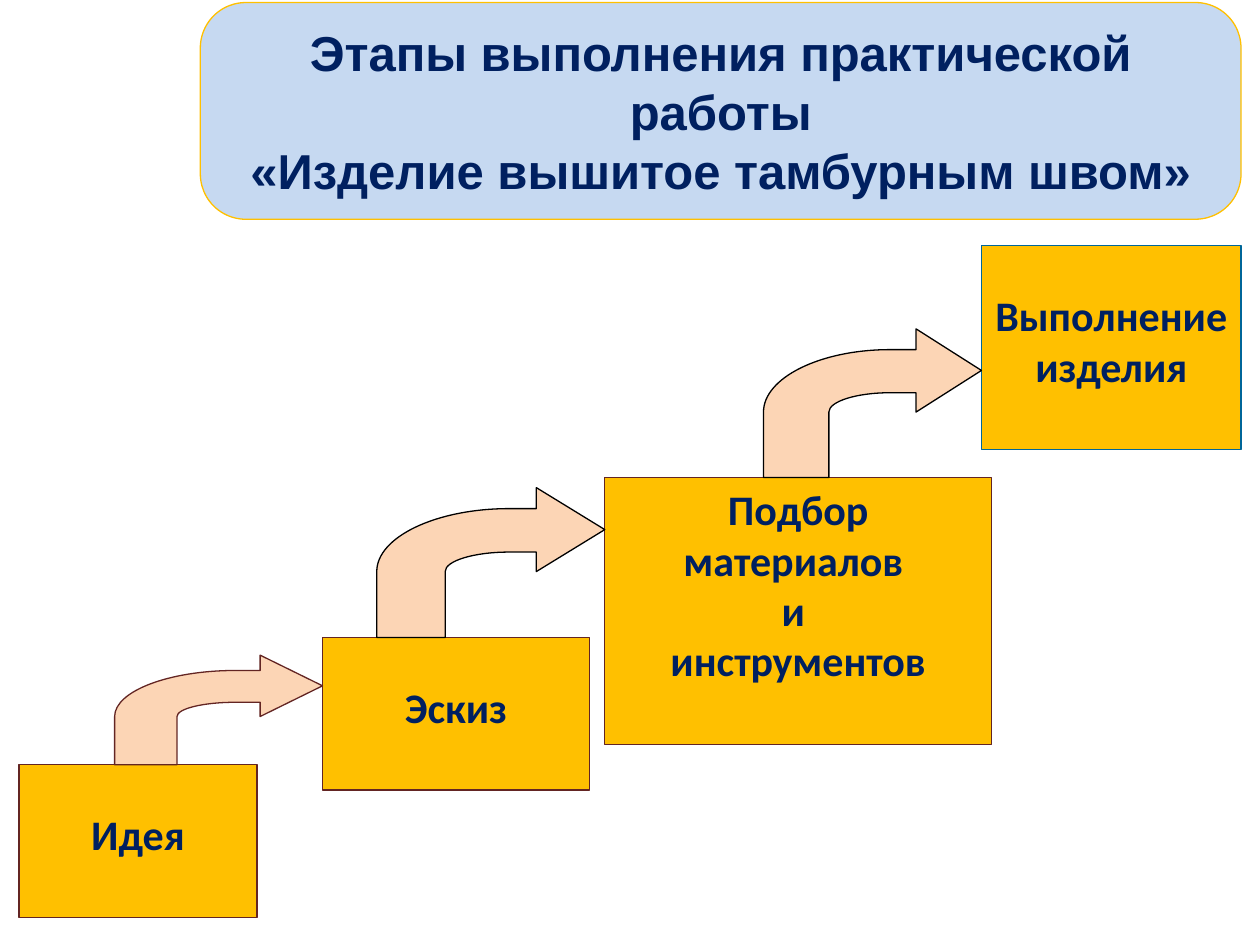
"""Build a slide of four rising steps joined by bent arrows."""
import pptx
import pptx.dml.color
import pptx.enum.shapes
import pptx.enum.text
import pptx.oxml.ns
import pptx.util

PX = 9144
RGBColor = pptx.dml.color.RGBColor
NAVY = RGBColor(0x00, 0x20, 0x60)
PALE_BLUE = RGBColor(0xC6, 0xD9, 0xF1)
GOLD = RGBColor(0xFF, 0xC0, 0x00)
PEACH = RGBColor(0xFC, 0xD5, 0xB5)
BROWN = RGBColor(0x63, 0x25, 0x23)
TEAL = RGBColor(0x00, 0x66, 0x99)
BLACK = RGBColor(0x00, 0x00, 0x00)
SHAPES = pptx.enum.shapes.MSO_SHAPE
ANCHOR = pptx.enum.text.MSO_ANCHOR


def paint(shape, fill, line):
    shape.shadow.inherit = False
    shape.fill.solid()
    shape.fill.fore_color.rgb = fill
    shape.line.color.rgb = line
    shape.line.width = pptx.util.Pt(0.75)


def write(box, lines, font, size, anchor, top):
    frame = box.text_frame
    frame.word_wrap = True
    frame.vertical_anchor = anchor
    frame.margin_top = top * PX
    for index, line in enumerate(lines):
        para = frame.add_paragraph() if index else frame.paragraphs[0]
        para.alignment = pptx.enum.text.PP_ALIGN.CENTER
        span = para.add_run()
        span.text = line
        span.font.name = font
        span.font.size = pptx.util.Pt(size)
        span.font.bold = True
        span.font.color.rgb = NAVY


deck = pptx.Presentation()
deck.slide_width = 1000 * PX
deck.slide_height = 750 * PX
page = deck.slides.add_slide(deck.slide_layouts[6])

title = page.shapes.add_shape(SHAPES.ROUNDED_RECTANGLE, 159 * PX, 2 * PX, 826 * PX, 172 * PX)
title.adjustments[0] = 0.21
paint(title, PALE_BLUE, GOLD)
title_lines = ["Этапы выполнения практической работы", "«Изделие вышитое тамбурным швом»"]
write(title, title_lines, "Arial", 28, ANCHOR.MIDDLE, 5)

steps = [
    (15, 607, 189, 121, BROWN, 35, ["Идея"]),
    (256, 506, 212, 121, BROWN, 35, ["Эскиз"]),
    (480, 379, 307, 212, BROWN, 5, ["Подбор материалов ", "и ", "инструментов"]),
    (779, 195, 206, 162, TEAL, 35, ["Выполнение изделия"]),
]
for left, top, width, height, outline, inset, lines in steps:
    step = page.shapes.add_shape(SHAPES.RECTANGLE, left * PX, top * PX, width * PX, height * PX)
    paint(step, GOLD, outline)
    write(step, lines, "Calibri", 24, ANCHOR.TOP, inset)

HEAD, BEND, LEG = 0.7, 0.58, 0.3
TIP, OUTER, INNER, LOW = 0.28, 0.14, 0.43, 0.56
PULL = 0.45
outer_curve = [(BEND * PULL, OUTER), (0, OUTER + (LOW - OUTER) * PULL), (0, LOW)]
inner_curve = [
    (LEG, INNER + (LOW - INNER) * PULL), (LEG + (BEND - LEG) * PULL, INNER), (BEND, INNER),
]
outline_points = [
    (1, TIP), (HEAD, 0), (HEAD, OUTER), (BEND, OUTER), *outer_curve,
    (0, 1), (LEG, 1), (LEG, LOW), *inner_curve, (HEAD, INNER), (HEAD, LOW),
]
curve_starts = [outline_points.index(curve[0]) - 1 for curve in (outer_curve, inner_curve)]

arrows = [(91, 520, 165, 87, BROWN), (299, 387, 181, 119, BLACK), (606, 261, 173, 118, BLACK)]
for left, top, width, height, outline in arrows:
    points = [((left + x * width) * PX, (top + y * height) * PX) for x, y in outline_points]
    builder = page.shapes.build_freeform(*points[0])
    builder.add_line_segments(points[1:], close=True)
    arrow = builder.convert_to_shape()
    paint(arrow, PEACH, outline)
    segments = arrow.element.findall(".//" + pptx.oxml.ns.qn("a:lnTo"))
    for start in curve_starts:
        curve = segments[start].makeelement(pptx.oxml.ns.qn("a:cubicBezTo"))
        segments[start].addprevious(curve)
        for segment in segments[start:start + 3]:
            curve.append(segment[0])
            segment.getparent().remove(segment)

deck.save("out.pptx")
